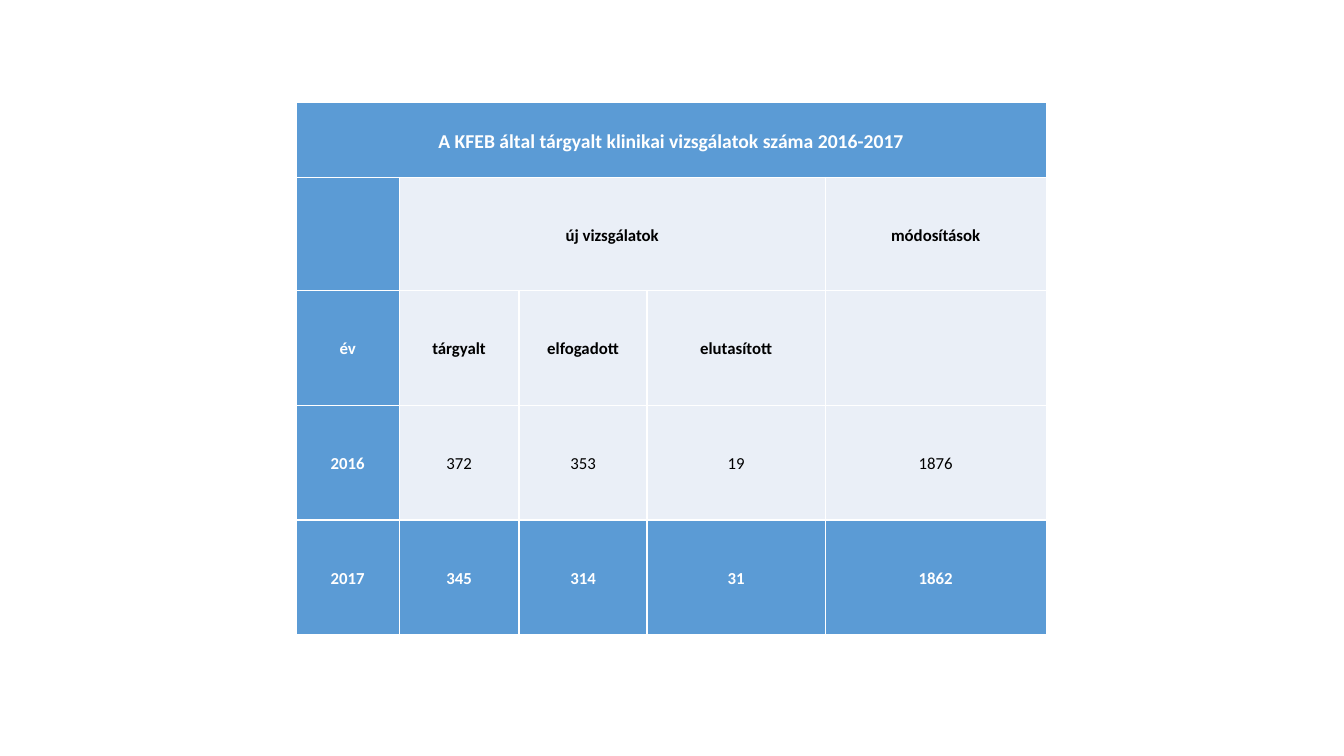
from dataclasses import dataclass

import pptx
import pptx.dml.color
import pptx.enum.text
import pptx.oxml
import pptx.oxml.ns
import pptx.table
import pptx.util
from pptx.util import Pt

BLUE, PALE, WHITE, BLACK = "5B9BD5", "EAEFF7", "FFFFFF", "000000"
TABLE_LEFT, TABLE_TOP = 211.7, 73.4
COLUMN_WIDTHS = [73.4, 85.7, 91.4, 127.4, 157.7]
ROW_HEIGHTS = [53.3, 80.6, 82.1, 82.1, 82.1]


@dataclass(frozen=True)
class CellStyle:
    fill: str
    color: str
    bold: bool = True
    size: float = 12


@dataclass(frozen=True)
class TrialRow:
    texts: list[str]
    style: CellStyle
    merged: tuple[int, int] | None = None


TITLE = CellStyle(BLUE, WHITE, size=14)
EMPHASIS = CellStyle(BLUE, WHITE)
HEADING = CellStyle(PALE, BLACK)
FIGURE = CellStyle(PALE, BLACK, bold=False)

TRIAL_ROWS = [
    TrialRow(["A KFEB által tárgyalt klinikai vizsgálatok száma 2016-2017",
              "", "", "", ""], TITLE, merged=(0, 4)),
    TrialRow(["", "új vizsgálatok", "", "", "módosítások"], HEADING, merged=(1, 3)),
    TrialRow(["év", "tárgyalt", "elfogadott", "elutasított", ""], HEADING),
    TrialRow(["2016", "372", "353", "19", "1876"], FIGURE),
    TrialRow(["2017", "345", "314", "31", "1862"], EMPHASIS),
]


def rgb(value: str) -> pptx.dml.color.RGBColor:
    return pptx.dml.color.RGBColor.from_string(value)


def add_borders(cell: pptx.table._Cell, color: str, width: float) -> None:
    properties = cell._tc.get_or_add_tcPr()
    for side in ("lnL", "lnR", "lnT", "lnB"):
        properties.append(pptx.oxml.parse_xml(
            f'<a:{side} {pptx.oxml.ns.nsdecls("a")} w="{Pt(width)}">'
            f'<a:solidFill><a:srgbClr val="{color}"/></a:solidFill></a:{side}>'))


def format_cell(cell: pptx.table._Cell, text: str, style: CellStyle) -> None:
    add_borders(cell, WHITE, 1)
    cell.fill.solid()
    cell.fill.fore_color.rgb = rgb(style.fill)
    cell.vertical_anchor = pptx.enum.text.MSO_ANCHOR.MIDDLE
    cell.margin_left = cell.margin_right = Pt(1.44)
    cell.margin_top = cell.margin_bottom = Pt(0)
    if not text:
        return
    paragraph = cell.text_frame.paragraphs[0]
    paragraph.alignment = pptx.enum.text.PP_ALIGN.CENTER
    paragraph.line_spacing = 1.15
    run = paragraph.add_run()
    run.text = text
    run.font.name = "Calibri"
    run.font.size = Pt(style.size)
    run.font.bold = style.bold
    run.font.color.rgb = rgb(style.color)


def add_trial_table(slide: pptx.slide.Slide) -> None:
    trials = slide.shapes.add_table(
        len(ROW_HEIGHTS), len(COLUMN_WIDTHS), Pt(TABLE_LEFT), Pt(TABLE_TOP),
        Pt(sum(COLUMN_WIDTHS)), Pt(sum(ROW_HEIGHTS))).table
    for column, width in zip(trials.columns, COLUMN_WIDTHS):
        column.width = Pt(width)
    for row, height in zip(trials.rows, ROW_HEIGHTS):
        row.height = Pt(height)

    # The year column is blue below the title
    for r, trial_row in enumerate(TRIAL_ROWS):
        for c, text in enumerate(trial_row.texts):
            style = EMPHASIS if c == 0 and r > 0 else trial_row.style
            format_cell(trials.cell(r, c), text, style)
        if trial_row.merged:
            first, last = trial_row.merged
            trials.cell(r, first).merge(trials.cell(r, last))


def main() -> None:
    # Blank widescreen slide
    presentation = pptx.Presentation()
    presentation.slide_width, presentation.slide_height = Pt(960), Pt(540)
    slide = presentation.slides.add_slide(presentation.slide_layouts[6])

    # Clinical trial figures
    add_trial_table(slide)
    presentation.save("out.pptx")


if __name__ == "__main__":
    main()
